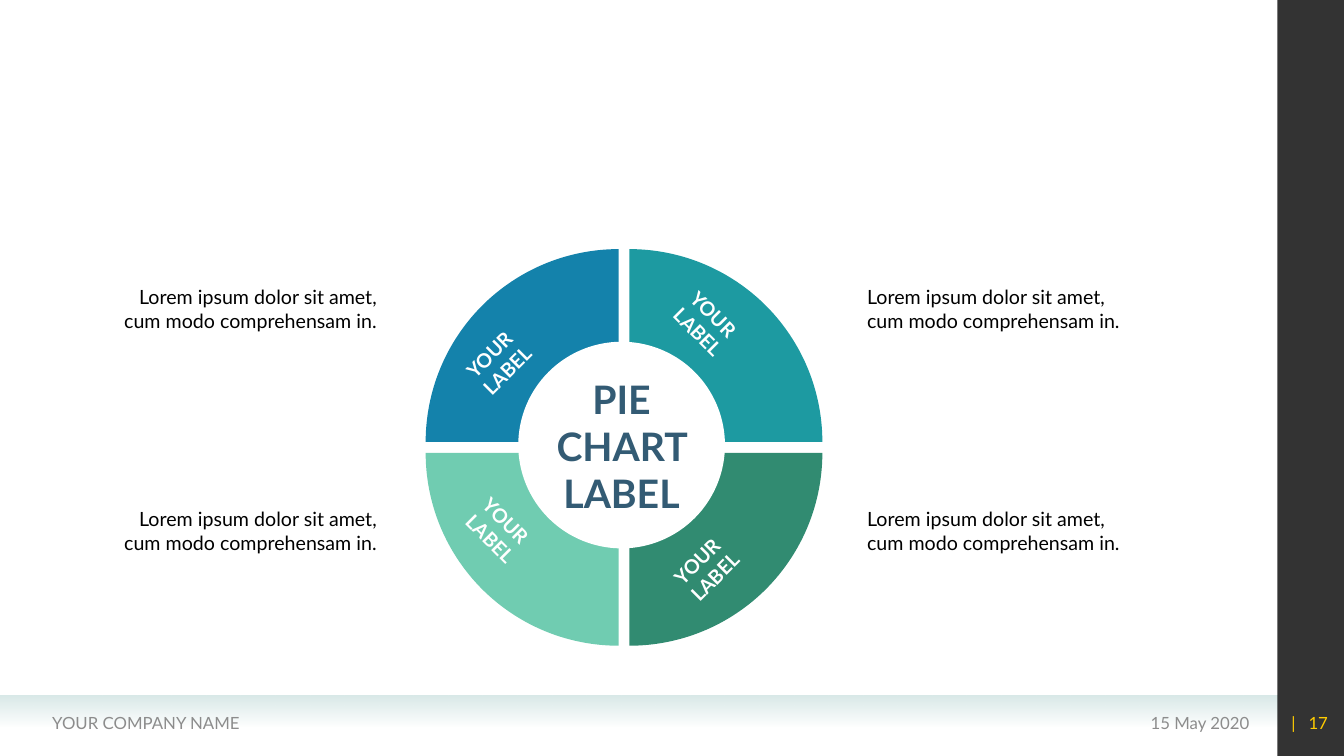
from pptx import Presentation
from pptx.chart.data import CategoryChartData
from pptx.dml.color import RGBColor
from pptx.enum.chart import XL_CHART_TYPE
from pptx.enum.shapes import MSO_SHAPE
from pptx.enum.text import MSO_ANCHOR, PP_ALIGN
from pptx.oxml import parse_xml
from pptx.oxml.ns import nsdecls, qn
from pptx.util import Inches, Pt

PIE = XL_CHART_TYPE.PIE
RECT, OVAL = MSO_SHAPE.RECTANGLE, MSO_SHAPE.OVAL
LEFT, MID, RIGHT = PP_ALIGN.LEFT, PP_ALIGN.CENTER, PP_ALIGN.RIGHT
TOP, CENTER = MSO_ANCHOR.TOP, MSO_ANCHOR.MIDDLE

WHITE = RGBColor(0xFF, 0xFF, 0xFF)
BLACK = RGBColor(0x00, 0x00, 0x00)
GREY = RGBColor(0x8C, 0x8C, 0x8C)
GOLD = RGBColor(0xFF, 0xCC, 0x00)
NAVY = RGBColor(0x33, 0x5B, 0x74)
MIST = RGBColor(0xD9, 0xE9, 0xE8)
TEAL = RGBColor(0x1D, 0x9A, 0xA1)
GREEN = RGBColor(0x31, 0x8B, 0x71)
MINT = RGBColor(0x70, 0xCC, 0xB1)
BLUE = RGBColor(0x14, 0x82, 0xAB)


class Deck:
    """Holds the style and the current slide, and draws each kind of element."""

    def __init__(self, slide, font):
        self.shapes = slide.shapes
        self.font = font

    def text(self, text, box, size=14, color=BLACK, bold=False, align=LEFT,
             anchor=TOP, pad=(0.1, 0.05, 0.1, 0.05), turn=0):
        item = self.shapes.add_textbox(*map(Inches, box))
        item.rotation = turn
        frame = item.text_frame
        frame.word_wrap = True
        frame.vertical_anchor = anchor
        (frame.margin_left, frame.margin_top,
         frame.margin_right, frame.margin_bottom) = map(Inches, pad)
        para = frame.paragraphs[0]
        para.alignment = align
        run = para.add_run()
        run.text = text
        font = run.font
        font.name, font.size, font.bold = self.font, Pt(size), bold
        font.color.rgb = color

    def shape(self, kind, box, color, alpha=100):
        item = self.shapes.add_shape(kind, *map(Inches, box))
        item.shadow.inherit = False
        item.line.fill.background()
        item.fill.solid()
        item.fill.fore_color.rgb = color
        self.fade(item, alpha)
        return item

    def band(self, box, color):
        item = self.shape(RECT, box, color)
        item.fill.gradient()
        item.fill.gradient_angle = 270
        for stop in item.fill.gradient_stops:
            stop.color.rgb = color
        self.fade(item, 100, 0)

    def fade(self, item, *alphas):
        tones = item.fill._xPr.iter(qn("a:srgbClr"))
        for tone, alpha in zip(tones, alphas):
            if alpha < 100:
                tone.append(parse_xml(
                    f'<a:alpha {nsdecls("a")} val="{alpha * 1000}"/>'))

    def pie(self, box, name, values, colors, gap, plot):
        data = CategoryChartData()
        data.categories = [str(i + 1) for i in range(len(values))]
        data.add_series(name, values)
        chart = self.shapes.add_chart(PIE, *map(Inches, box), data).chart
        chart.has_legend = chart.has_title = False
        chart.font.name, chart.font.size = self.font, Pt(10)
        chart.font.color.rgb = BLACK
        chart.plots[0].vary_by_categories = True
        series = chart.plots[0].series[0]
        for i, color in enumerate(colors):
            fill = series.points[i].format.fill
            fill.solid()
            fill.fore_color.rgb = color
        series._element.find(qn("c:dPt")).addprevious(parse_xml(
            f'<c:explosion {nsdecls("c")} val="{gap}"/>'))
        area = chart._chartSpace.find(qn("c:chart")).find(qn("c:plotArea"))
        for old in area.findall(qn("c:layout")):
            area.remove(old)
        sides = "".join(f'<c:{key} val="{val}"/>'
                        for key, val in zip("xywh", plot))
        area.insert(0, parse_xml(
            f'<c:layout {nsdecls("c")}><c:manualLayout>'
            '<c:layoutTarget val="inner"/><c:xMode val="edge"/>'
            f'<c:yMode val="edge"/>{sides}</c:manualLayout></c:layout>'))


def main():
    prs = Presentation()
    prs.slide_width, prs.slide_height = Inches(13.33), Inches(7.5)
    deck = Deck(prs.slides.add_slide(prs.slide_layouts[6]), "Lato")

    deck.band((0, 6.9, 12.67, 0.31), MIST)
    deck.shape(RECT, (12.67, 0, 0.67, 7.5), BLACK, alpha=80)
    for text, left, width, color, align in (
            ("15 May 2020", 9.1, 3.39, GREY, RIGHT),
            ("YOUR COMPANY NAME", 0.42, 4.9, GREY, LEFT),
            ("|   17", 12.6, 0.67, GOLD, RIGHT)):
        deck.text(text, (left, 6.97, width, 0.4), size=12, color=color,
                  align=align, anchor=CENTER)

    deck.pie((4.16, 2.41, 4.02, 4.02), "Series 1", [25] * 4,
             (TEAL, GREEN, MINT, BLUE), 4, (0.01, 0.01, 0.99, 0.99))
    deck.shape(OVAL, (5.14, 3.39, 2.05, 2.05), WHITE)

    for left, align in ((8.56, LEFT), (1.08, RIGHT)):
        for top in (2.81, 5.01):
            deck.text("Lorem ipsum dolor sit amet, cum modo comprehensam in.",
                      (left, top, 2.7, 0.51), align=align,
                      pad=(0.04, 0.02, 0.04, 0.02))

    deck.text("PIE CHART LABEL", (5.35, 3.67, 1.63, 1.51), size=28,
              color=NAVY, bold=True, align=MID)
    for row, top in enumerate((3.23, 5.28)):
        for col, left in enumerate((4.48, 6.54)):
            deck.text("YOUR LABEL", (left, top, 1.31, 0.34), color=WHITE,
                      bold=True, anchor=CENTER, pad=(0.1, 0.05, 0.4, 0.05),
                      turn=315 if row == col else 45)

    prs.save("out.pptx")


if __name__ == "__main__":
    main()
